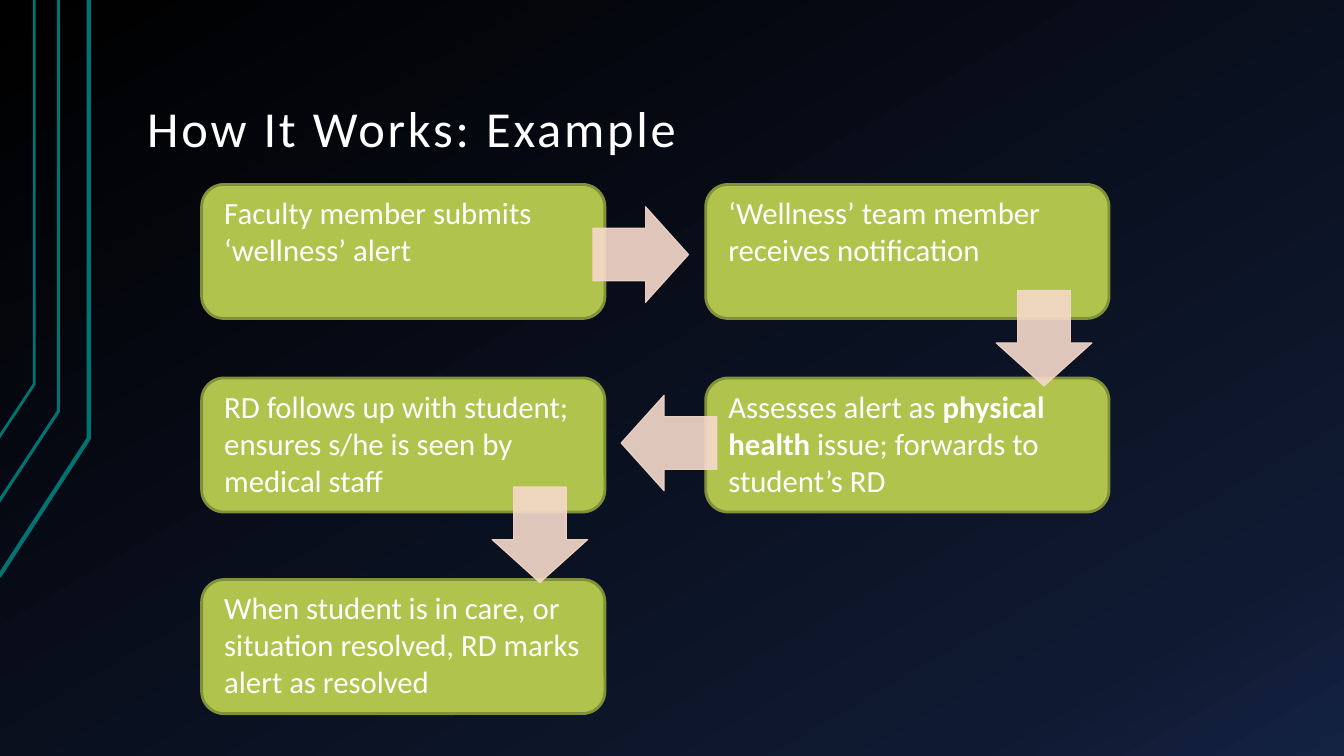
"""Build the "How It Works: Example" flow slide."""
from copy import deepcopy

from lxml import etree
from pptx import Presentation
from pptx.dml.color import RGBColor
from pptx.enum.shapes import MSO_SHAPE
from pptx.enum.text import MSO_ANCHOR
from pptx.oxml.ns import qn
from pptx.util import Inches, Pt

ROUNDED = MSO_SHAPE.ROUNDED_RECTANGLE
DOWN_ARROW = MSO_SHAPE.DOWN_ARROW
TOP, BOTTOM = MSO_ANCHOR.TOP, MSO_ANCHOR.BOTTOM

FONT = "Calibri"
COLORS = {
    "sky_top": "000000",
    "sky_mid": "0F1931",
    "sky_low": "142242",
    "teal": "007373",
    "box": "AFC34D",
    "box_line": "819039",
    "arrow": "F7DACC",
    "text": "FFFFFF",
}


def rgb(name):
    return RGBColor.from_string(COLORS[name])


def style_text(p, size):
    p.font.name = FONT
    p.font.size = Pt(size)
    p.font.color.rgb = rgb("text")


prs = Presentation()
prs.slide_width, prs.slide_height = Inches(13.33), Inches(7.5)
s = prs.slides.add_slide(prs.slide_layouts[6])

fill = s.background.fill
fill.gradient()
fill.gradient_angle = 300
stop_list = next(s.background._cSld.iter(qn("a:gsLst")))
stop_list.append(deepcopy(stop_list[-1]))
sky = [(0, "sky_top"), (0.85, "sky_mid"), (1, "sky_low")]
for stop, (position, color) in zip(fill.gradient_stops, sky):
    stop.position = position
    stop.color.rgb = rgb(color)

bent_lines = [
    (-0.01, 5.72, 0.88, 4.35, 3),
    (-0.02, 4.99, 0.58, 4.08, 2.25),
    (-0.01, 4.34, 0.34, 3.81, 2),
]
for x0, y0, x1, y1, width in bent_lines:
    builder = s.shapes.build_freeform(Inches(x0), Inches(y0))
    builder.add_line_segments([(Inches(x1), Inches(y1)), (Inches(x1), 0)], close=False)
    sp = builder.convert_to_shape()
    sp.shadow.inherit = False
    sp.fill.background()
    sp.line.color.rgb = rgb("teal")
    sp.line.width = Pt(width)

title = s.shapes.add_textbox(Inches(1.33), Inches(0.3), Inches(11.33), Inches(1.34))
tf = title.text_frame
tf.word_wrap = True
tf.vertical_anchor = BOTTOM
tf.margin_left = tf.margin_right = Inches(0.13)
tf.margin_top = tf.margin_bottom = Inches(0.07)
p = tf.paragraphs[0]
p.line_spacing = 0.9
style_text(p, 36)
r = p.add_run()
r.text = "How It Works: Example"
r.font._element.set("spc", "200")

LEFT, RIGHT = 2, 7
ROWS = [1.83, 3.75, 5.75]
steps = [
    (LEFT, ROWS[0], [("Faculty member submits ‘wellness’ alert", False)]),
    (RIGHT, ROWS[0], [("‘Wellness’ team member receives notification", False)]),
    (RIGHT, ROWS[1], [("Assesses alert as ", False), ("physical health", True),
                      (" issue; forwards to student’s RD", False)]),
    (LEFT, ROWS[1], [("RD follows up with student; ensures s/he is seen by medical staff", False)]),
    (LEFT, ROWS[2], [("When student is in care, or situation resolved, RD marks alert as resolved", False)]),
]
for x, y, runs in steps:
    sp = s.shapes.add_shape(ROUNDED, Inches(x), Inches(y), Inches(4), Inches(1.33))
    sp.shadow.inherit = False
    sp.fill.solid()
    sp.fill.fore_color.rgb = rgb("box")
    sp.line.color.rgb = rgb("box_line")
    sp.line.width = Pt(2)
    tf = sp.text_frame
    tf.word_wrap = True
    tf.vertical_anchor = TOP
    tf.margin_left, tf.margin_right = Inches(0.16), Inches(0.05)
    tf.margin_top = tf.margin_bottom = Inches(0.03)
    p = tf.paragraphs[0]
    p.alignment = 1
    style_text(p, 22)
    for text, bold in runs:
        r = p.add_run()
        r.text = text
        r.font.bold = bold

arrows = [(5.88, 2.05, 270), (9.88, 2.88, 0), (6.16, 3.92, 90), (4.88, 4.83, 0)]
for x, y, rotation in arrows:
    sp = s.shapes.add_shape(DOWN_ARROW, Inches(x), Inches(y), Inches(0.95), Inches(0.95))
    sp.rotation = rotation
    sp.adjustments[0], sp.adjustments[1] = 0.55, 0.45
    sp.shadow.inherit = False
    sp.fill.solid()
    sp.fill.fore_color.rgb = rgb("arrow")
    sp.line.color.rgb = rgb("arrow")
    sp.line.width = Pt(0.75)
    for color in sp._element.spPr.iter(qn("a:srgbClr")):
        etree.SubElement(color, qn("a:alpha")).set("val", "90000")

prs.save("out.pptx")
